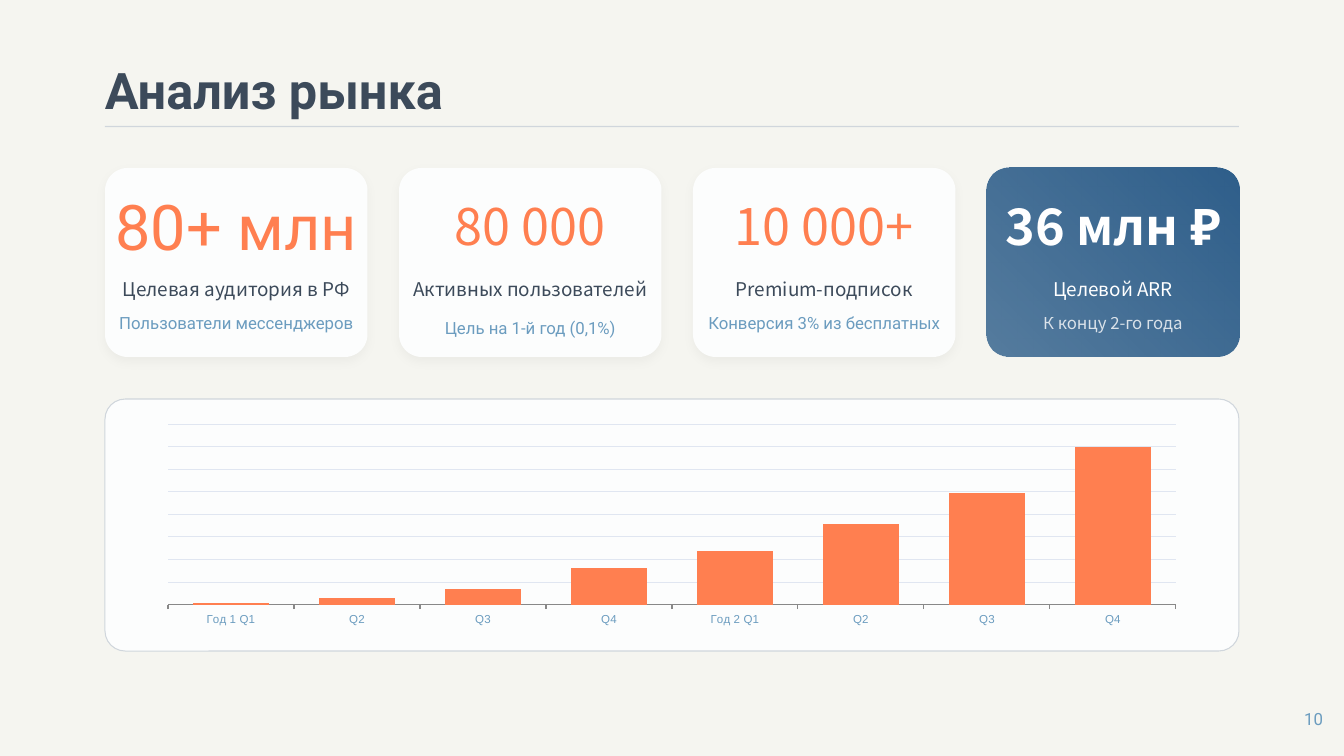
"""Build the market analysis slide: four figure cards above a growth chart."""
import lxml.etree
import pptx
import pptx.chart.data
import pptx.dml.color
import pptx.enum.chart
import pptx.enum.shapes
import pptx.enum.text
import pptx.oxml.ns
import pptx.util

Pt = pptx.util.Pt
RGB = pptx.dml.color.RGBColor
qn = pptx.oxml.ns.qn
Kind = pptx.enum.shapes.MSO_SHAPE
Align = pptx.enum.text.PP_ALIGN

CREAM = RGB(0xF5, 0xF5, 0xF0)
PAPER = RGB(0xFC, 0xFD, 0xFD)
WHITE = RGB(0xFF, 0xFF, 0xFF)
BLACK = RGB(0x00, 0x00, 0x00)
SLATE = RGB(0x3C, 0x4A, 0x5A)
RULE = RGB(0xD0, 0xD6, 0xDC)
CORAL = RGB(0xFF, 0x7F, 0x50)
SKY = RGB(0x6B, 0x9C, 0xBF)
NAVY = RGB(0x2E, 0x5E, 0x8A)
GRID = RGB(0xE0, 0xE6, 0xF1)
GREY = RGB(0x88, 0x88, 0x88)
ROBOTO = "Roboto"
NOTO = "Noto Sans CJK SC"


def add(parent, tag, **attrs):
    node = lxml.etree.SubElement(parent, qn(tag))
    for key, value in attrs.items():
        node.set(key, str(value))
    return node


def fade(color, percent):
    add(color, "a:alpha", val=percent * 1000)


def style(font, size, color, name, bold=False):
    font.size, font.name, font.bold = Pt(size), name, bold
    font.color.rgb = color


class Deck:
    """Hold the slide style and draw each kind of element."""

    def __init__(self, wide, high):
        self.show = pptx.Presentation()
        self.show.slide_width, self.show.slide_height = Pt(wide), Pt(high)
        self.slide = self.show.slides.add_slide(self.show.slide_layouts[6])
        self.slide.background.fill.solid()
        self.slide.background.fill.fore_color.rgb = CREAM

    def text(self, words, box, size=16, color=SKY, font=ROBOTO,
             bold=False, align=Align.CENTER, alpha=None):
        frame = self.slide.shapes.add_textbox(*map(Pt, box)).text_frame
        frame.word_wrap = True
        frame.vertical_anchor = pptx.enum.text.MSO_ANCHOR.MIDDLE
        frame.margin_left = frame.margin_right = 0
        frame.margin_top = frame.margin_bottom = 0
        line = frame.paragraphs[0]
        line.alignment = align
        run = line.add_run()
        run.text = words
        style(run.font, size, color, font, bold)
        if alpha:
            fade(run.font.fill._xPr.find(".//" + qn("a:srgbClr")), alpha)

    def panel(self, box, fill=PAPER, kind=Kind.ROUNDED_RECTANGLE,
              curve=None, edge=None):
        shape = self.slide.shapes.add_shape(kind, *map(Pt, box))
        shape.shadow.inherit = False
        shape.fill.solid()
        shape.fill.fore_color.rgb = fill
        if curve:
            shape.adjustments[0] = curve
        if edge:
            shape.line.color.rgb = edge
            shape.line.width = Pt(1)
        else:
            shape.line.fill.background()
        return shape

    def shade(self, shape):
        root = shape.element.spPr.find(qn("a:effectLst"))
        glow = add(root, "a:outerShdw", blurRad=Pt(10), dist=Pt(4),
                   dir=90 * 60000, algn="ctr", rotWithShape=0)
        fade(add(glow, "a:srgbClr", val=BLACK), 3)

    def blend(self, shape, color, percent):
        shape.fill.gradient()
        shape.fill.gradient_angle = 225
        for stop, place in zip(shape.fill.gradient_stops, (0, 1)):
            stop.position = place
            stop.color.rgb = color
        fade(shape.element.spPr.findall(".//" + qn("a:srgbClr"))[1], percent)

    def card(self, left, wide, big, label, note, size=48, font=NOTO,
             drop=295, tall=25, dark=False):
        shape = self.panel((left, 160, wide, 180), curve=0.12)
        if dark:
            self.blend(shape, NAVY, 80)
        else:
            self.shade(shape)
        self.text(big, (left, 180, wide, 70), size=size, font=font,
                  color=WHITE if dark else CORAL, bold=dark)
        self.text(label, (left, 260, wide, 30), size=18, font=NOTO,
                  color=WHITE if dark else SLATE)
        self.text(note, (left, drop, wide, tall),
                  font=NOTO if dark else ROBOTO,
                  color=WHITE if dark else SKY, alpha=80 if dark else None)

    def bars(self, box, names, values, step, count):
        enum = pptx.enum.chart
        data = pptx.chart.data.CategoryChartData()
        data.categories = names
        data.add_series("Series 1", values)
        chart = self.slide.shapes.add_chart(
            enum.XL_CHART_TYPE.COLUMN_CLUSTERED, *map(Pt, box), data).chart
        chart.has_legend = chart.has_title = False
        style(chart.font, 10, BLACK, "Calibri")
        plot = chart.plots[0]
        plot.gap_width = 67
        plot.vary_by_categories = False
        fill = plot.series[0].format.fill
        fill.solid()
        fill.fore_color.rgb = CORAL
        base, scale = chart.category_axis, chart.value_axis
        base.tick_label_position = enum.XL_TICK_LABEL_POSITION.LOW
        base.major_tick_mark = enum.XL_TICK_MARK.OUTSIDE
        style(base.tick_labels.font, 11, SKY, "Arial")
        scale.visible = False
        scale.minimum_scale, scale.maximum_scale = 0, step * count
        scale.major_unit = step
        scale.has_major_gridlines = True
        for line, color in ((base.format.line, GREY),
                            (scale.major_gridlines.format.line, GRID)):
            line.color.rgb = color
            line.width = Pt(1)
        self.place(chart, x=0.02, y=0.02, w=0.96, h=0.86)

    def place(self, chart, **sides):
        area = chart.element.find(".//" + qn("c:plotArea"))
        for old in area.findall(qn("c:layout")):
            area.remove(old)
        outer = add(area, "c:layout")
        area.insert(0, outer)
        inner = add(outer, "c:manualLayout")
        add(inner, "c:layoutTarget", val="inner")
        for side in "xy":
            add(inner, f"c:{side}Mode", val="edge")
        for side, value in sides.items():
            add(inner, f"c:{side}", val=value)


def main():
    deck = Deck(1280, 720)
    deck.text("Анализ рынка", (100, 60, 800, 50), size=48, color=SLATE,
              bold=True, align=Align.LEFT)
    deck.panel((100, 120, 1080, 1), fill=RULE, kind=Kind.RECTANGLE)
    cards = (
        ("80+ млн", "Целевая аудитория в РФ", "Пользователи мессенджеров",
         dict(size=60, font=ROBOTO)),
        ("80 000", "Активных пользователей", "Цель на 1-й год (0,1%)",
         dict(drop=292, tall=40)),
        ("10 000+", "Premium-подписок", "Конверсия 3% из бесплатных", {}),
        ("36 млн ₽", "Целевой ARR", "К концу 2-го года", dict(dark=True)),
    )
    for spot, (big, label, note, look) in enumerate(cards):
        left = 100 + 280 * spot
        deck.card(left, min(250, 1180 - left), big, label, note, **look)
    deck.panel((100, 380, 1080, 240), curve=0.08, edge=RULE)
    terms = ["Год 1 Q1", "Q2", "Q3", "Q4", "Год 2 Q1", "Q2", "Q3", "Q4"]
    deck.bars((140, 400, 1000, 200), terms,
              (1, 4, 10, 23, 34, 51, 71, 100), step=14.29, count=8)
    deck.text("10", (1180, 670, 80, 30), align=Align.RIGHT)
    deck.show.save("out.pptx")


if __name__ == "__main__":
    main()
